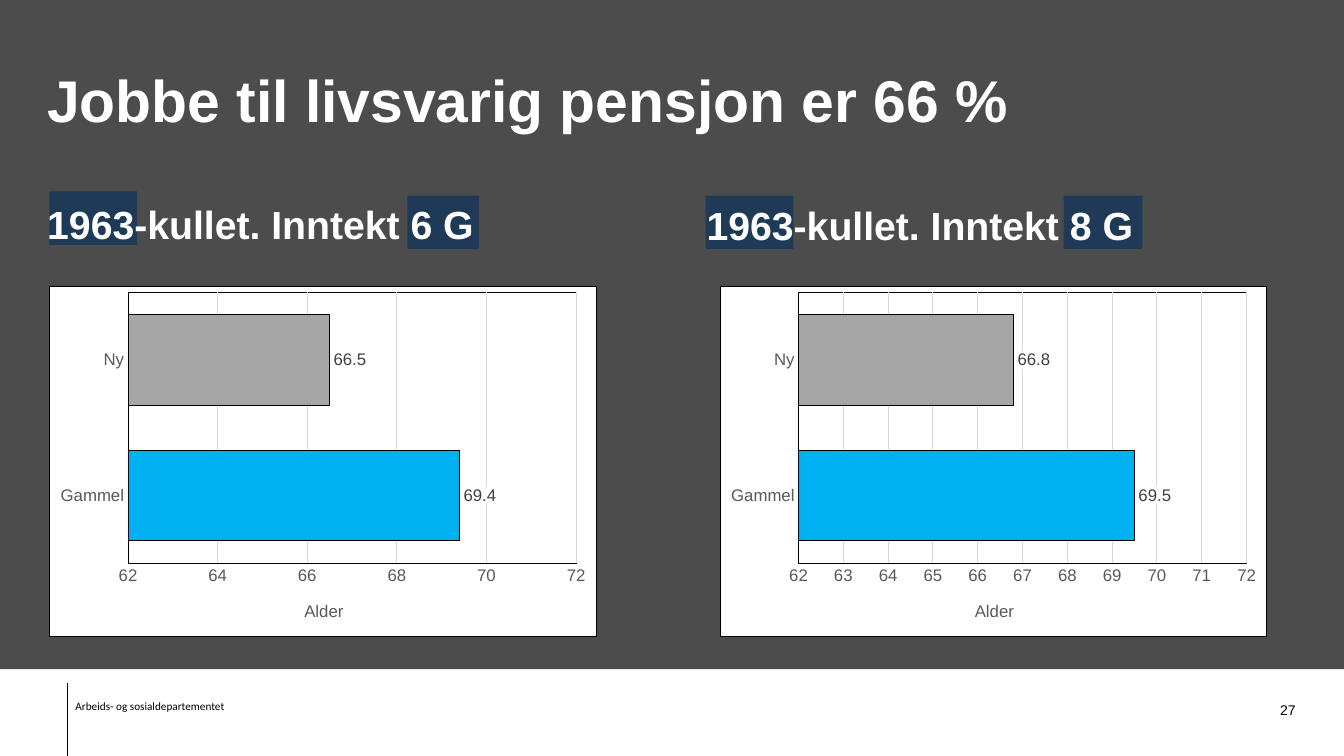
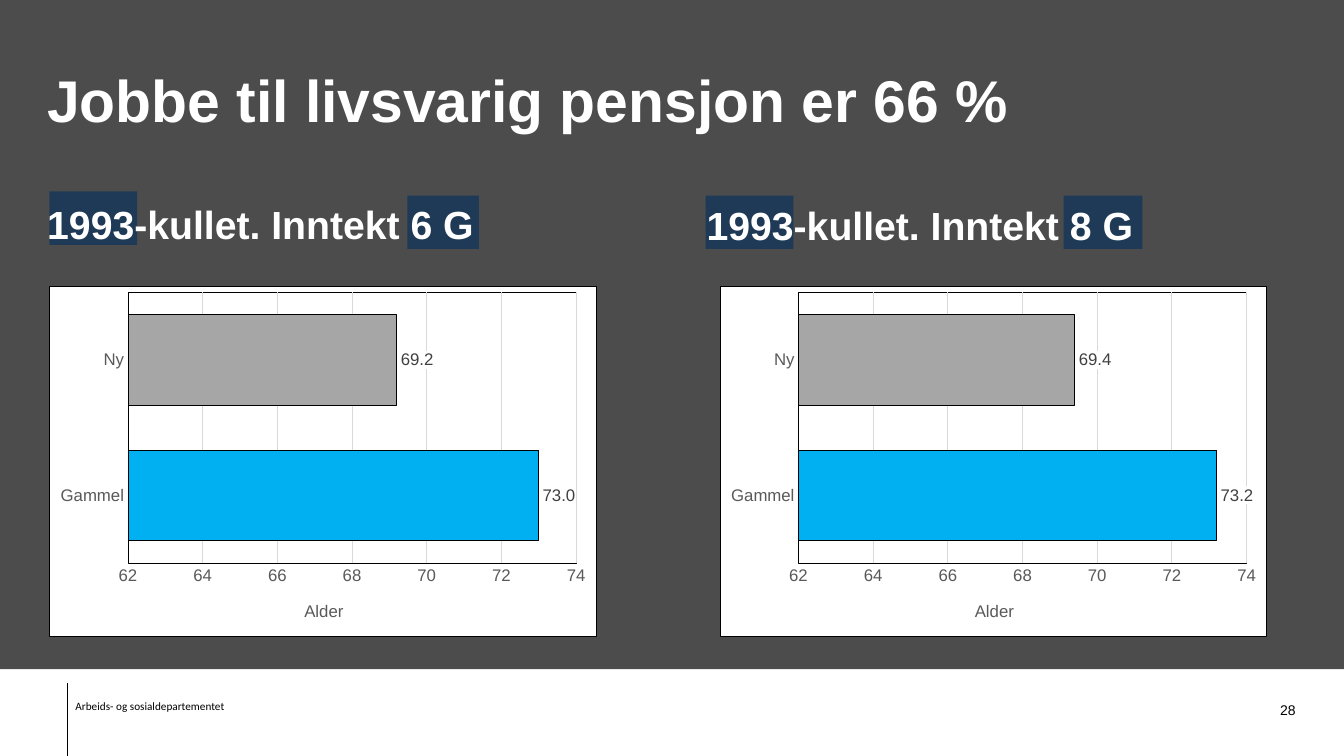
from dataclasses import dataclass

from pptx import Presentation
from pptx.chart.data import CategoryChartData
from pptx.dml.color import RGBColor
from pptx.enum.chart import XL_CHART_TYPE, XL_LABEL_POSITION, XL_TICK_MARK
from pptx.enum.shapes import MSO_CONNECTOR, MSO_SHAPE
from pptx.enum.text import MSO_ANCHOR, PP_ALIGN
from pptx.oxml import parse_xml
from pptx.oxml.ns import nsdecls, qn
from pptx.util import Inches, Pt

BAR = XL_CHART_TYPE.BAR_CLUSTERED
OUTER = XL_LABEL_POSITION.OUTSIDE_END
NO_TICK = XL_TICK_MARK.NONE
STRAIGHT = MSO_CONNECTOR.STRAIGHT
RECT = MSO_SHAPE.RECTANGLE
TOP, BOTTOM = MSO_ANCHOR.TOP, MSO_ANCHOR.BOTTOM
LEFT, RIGHT = PP_ALIGN.LEFT, PP_ALIGN.RIGHT

BLACK = RGBColor(0x00, 0x00, 0x00)
WHITE = RGBColor(0xFF, 0xFF, 0xFF)
NAVY = RGBColor(0x00, 0x2E, 0x5E)
BLUE = RGBColor(0x00, 0xB0, 0xF0)
GREY = RGBColor(0xA6, 0xA6, 0xA6)
PALE = RGBColor(0xD9, 0xD9, 0xD9)
AXIS = RGBColor(0x59, 0x59, 0x59)
LABEL = RGBColor(0x40, 0x40, 0x40)
FONT = "Arial"
THIN = Pt(0.75)


@dataclass(frozen=True)
class Box:
    x: float
    y: float
    w: float
    h: float

    def size(self) -> tuple:
        return Inches(self.x), Inches(self.y), Inches(self.w), Inches(self.h)


@dataclass(frozen=True)
class Style:
    size: float
    color: RGBColor
    bold: bool = False
    name: str = FONT


@dataclass(frozen=True)
class Side:
    income: str
    head: Box
    chart: Box
    marks: tuple


@dataclass(frozen=True)
class Plot:
    old: float
    new: float
    step: int


@dataclass(frozen=True)
class Page:
    number: int
    cohort: str
    top: int
    plots: tuple


TITLE = Style(42, WHITE, True)
HEAD = Style(28, WHITE, True)
FOOT = Style(8, BLACK, name="Calibri")
NUMBER = Style(10, BLACK)
SIDES = (
    Side("6 G", Box(0.37, 1.97, 5.94, 0.53), Box(0.49, 2.84, 5.43, 3.48),
         (Box(0.49, 1.9, 0.87, 0.53), Box(4.04, 1.94, 0.71, 0.53))),
    Side("8 G", Box(6.91, 1.98, 5.94, 0.53), Box(7.14, 2.84, 5.43, 3.48),
         (Box(7, 1.94, 0.87, 0.53), Box(10.55, 1.94, 0.78, 0.53))),
)
PAGES = (
    Page(27, "1963", 72, (Plot(69.4, 66.5, 2), Plot(69.5, 66.8, 1))),
    Page(28, "1993", 74, (Plot(73.0, 69.2, 2), Plot(73.2, 69.4, 2))),
)


def set_font(font, style: Style) -> None:
    font.size = Pt(style.size)
    font.name = style.name
    font.bold = style.bold
    font.color.rgb = style.color


def add_text(slide, box: Box, text: str, style: Style,
             anchor=TOP, align=LEFT):
    frame = slide.shapes.add_textbox(*box.size()).text_frame
    frame.word_wrap = True
    frame.vertical_anchor = anchor
    para = frame.paragraphs[0]
    para.alignment = align
    run = para.add_run()
    run.text = text
    set_font(run.font, style)
    return frame


def add_pane(slide, box: Box, color: RGBColor, alpha: int) -> None:
    pane = slide.shapes.add_shape(RECT, *box.size())
    pane.shadow.inherit = False
    pane.line.fill.background()
    pane.fill.solid()
    pane.fill.fore_color.rgb = color
    tint = pane.fill._xPr.find(".//" + qn("a:srgbClr"))
    tint.append(parse_xml(f'<a:alpha {nsdecls("a")} val="{alpha * 1000}"/>'))


def make_look(fill: RGBColor | None, line: RGBColor | None):
    def ink(color: RGBColor | None) -> str:
        if color is None:
            return "<a:noFill/>"
        return f'<a:solidFill><a:srgbClr val="{color}"/></a:solidFill>'
    return parse_xml(f'<c:spPr {nsdecls("c", "a")}>{ink(fill)}'
                     f'<a:ln w="{int(THIN)}">{ink(line)}</a:ln></c:spPr>')


def make_layout(**spots: float):
    modes = "".join(f'<c:{key}Mode val="edge"/>' for key in ("x", "y"))
    target = '<c:layoutTarget val="inner"/>' if "w" in spots else ""
    parts = "".join(f'<c:{key} val="{val}"/>' for key, val in spots.items())
    return parse_xml(f'<c:layout {nsdecls("c")}><c:manualLayout>{target}'
                     f'{modes}{parts}</c:manualLayout></c:layout>')


def drop_layout(node) -> None:
    for child in node.findall(qn("c:layout")):
        node.remove(child)


def set_axes(chart, top: int, step: int) -> None:
    style = Style(12, AXIS)
    for axis in (chart.category_axis, chart.value_axis):
        axis.major_tick_mark = NO_TICK
        axis.minor_tick_mark = NO_TICK
        set_font(axis.tick_labels.font, style)
    line = chart.category_axis.format.line
    line.color.rgb = BLACK
    line.width = THIN
    chart.category_axis.has_major_gridlines = False
    axis = chart.value_axis
    axis.minimum_scale, axis.maximum_scale = 62, top
    axis.major_unit = step
    axis.format.line.fill.background()
    axis.has_major_gridlines = True
    grid = axis.major_gridlines.format.line
    grid.color.rgb = PALE
    grid.width = THIN
    run = axis.axis_title.text_frame.paragraphs[0].add_run()
    run.text = "Alder"
    set_font(run.font, style)
    title = axis.axis_title._element
    drop_layout(title)
    title.find(qn("c:tx")).addnext(make_layout(x=0.46, y=0.89))


def set_bars(chart) -> None:
    plot = chart.plots[0]
    plot.gap_width = 50
    plot.vary_by_categories = False
    bars = plot.series[0]
    bars.invert_if_negative = False
    for index, color in enumerate((BLUE, GREY)):
        look = bars.points[index].format
        look.fill.solid()
        look.fill.fore_color.rgb = color
        look.line.color.rgb = BLACK
        look.line.width = THIN
    labels = bars.data_labels
    labels.show_value = True
    labels.number_format = "#,##0.0"
    labels.number_format_is_linked = False
    labels.position = OUTER
    set_font(labels.font, Style(12, LABEL))
    labels._element.find(qn("c:numFmt")).addnext(make_look(WHITE, None))


def add_bars(slide, box: Box, plot: Plot, top: int) -> None:
    data = CategoryChartData()
    data.categories = ("Gammel", "Ny")
    data.add_series("Series 1", (plot.old, plot.new))
    chart = slide.shapes.add_chart(BAR, *box.size(), data).chart
    chart.has_title = False
    chart.has_legend = False
    set_font(chart.font, Style(12, BLACK))
    set_axes(chart, top, plot.step)
    set_bars(chart)
    root = chart._chartSpace.find(qn("c:chart"))
    root.addnext(make_look(WHITE, BLACK))
    area = root.find(qn("c:plotArea"))
    drop_layout(area)
    area.insert(0, make_layout(x=0.143, y=0.016, w=0.82, h=0.774))
    area.append(make_look(None, BLACK))


def add_frame(slide, number: int) -> None:
    add_text(slide, Box(0.65, 6.89, 2.83, 0.24),
             "Arbeids- og sosialdepartementet", FOOT)
    rule = slide.shapes.add_connector(
        STRAIGHT, Inches(0.67), Inches(6.78), Inches(0.67), Inches(7.5))
    rule.line.color.rgb = BLACK
    rule.line.width = THIN
    rule._element.spPr.append(parse_xml(f'<a:effectLst {nsdecls("a")}/>'))
    frame = add_text(slide, Box(12.3, 6.91, 0.55, 0.24), str(number),
                     NUMBER, align=RIGHT)
    frame.margin_right = 0
    add_pane(slide, Box(0, 0, 13.33, 6.64), BLACK, 70)
    add_text(slide, Box(0.37, 0.32, 12.85, 1.06),
             "Jobbe til livsvarig pensjon er 66 %", TITLE, BOTTOM)


def add_page(deck, page: Page) -> None:
    slide = deck.slides.add_slide(deck.slide_layouts[6])
    add_frame(slide, page.number)
    for side, plot in zip(SIDES, page.plots):
        for mark in side.marks:
            add_pane(slide, mark, NAVY, 60)
        add_bars(slide, side.chart, plot, page.top)
        add_text(slide, side.head,
                 f"{page.cohort}-kullet. Inntekt {side.income}", HEAD, BOTTOM)


def main() -> None:
    deck = Presentation()
    deck.slide_width, deck.slide_height = Inches(13.33), Inches(7.5)
    for page in PAGES:
        add_page(deck, page)
    deck.save("out.pptx")


if __name__ == "__main__":
    main()
